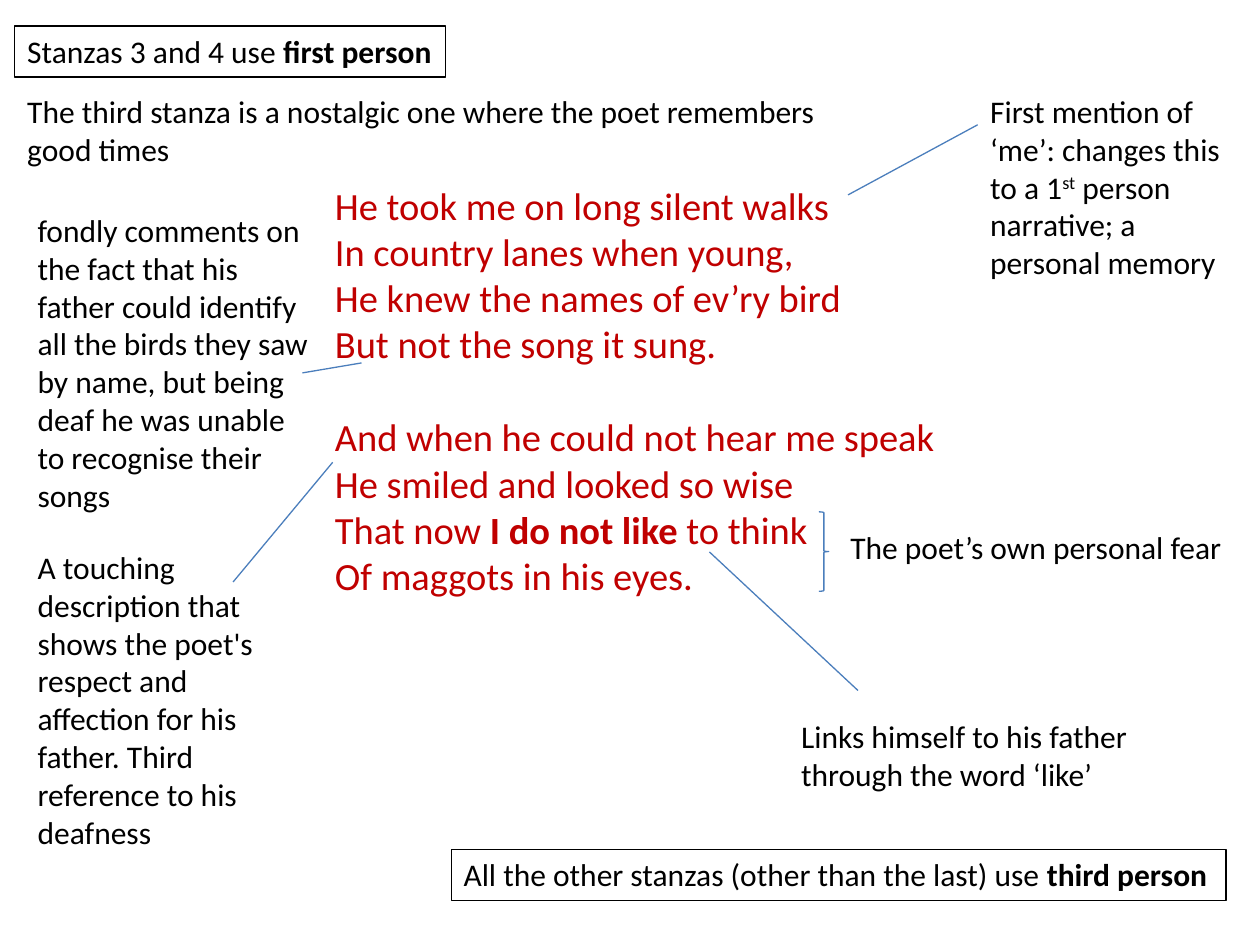
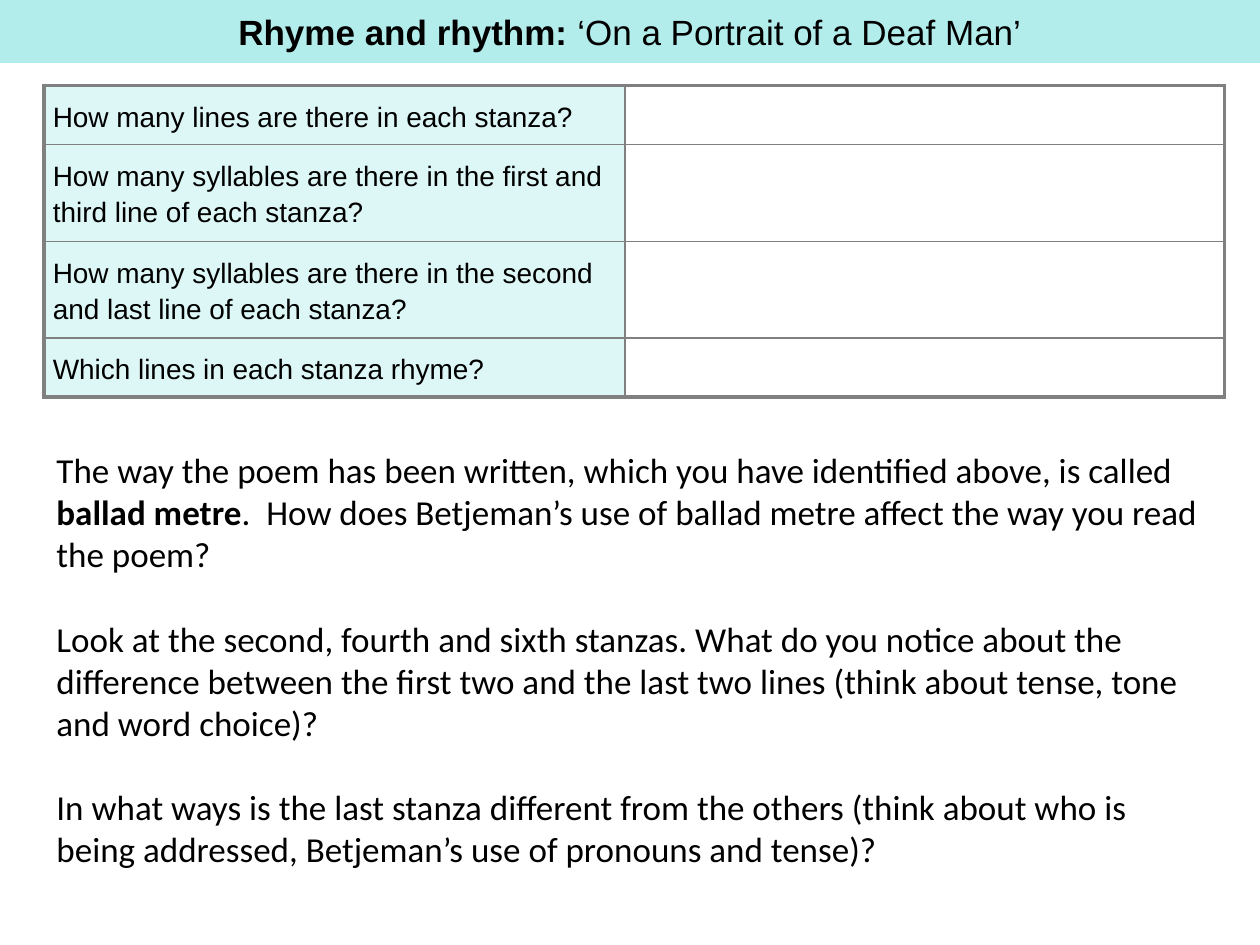
from typing import NamedTuple

from lxml.etree import SubElement
from pptx import Presentation
from pptx.dml.color import RGBColor
from pptx.enum.shapes import MSO_CONNECTOR as Link, MSO_SHAPE as Shape
from pptx.enum.text import MSO_ANCHOR as Anchor, MSO_AUTO_SIZE as Fit, PP_ALIGN as Align
from pptx.oxml.ns import qn
from pptx.util import Pt

BLACK, RED, BLUE, GREY = "000000", "C00000", "4B7EBC", "808080"
BAND, TINT = "B2EDEC", "DDF7F6"
SERIF_FREE, SANS = "Calibri", "Arial"
LEADING = 1.22  # line height of the body font, relative to its size


class Run(NamedTuple):
    text: str
    bold: bool = False
    raised: bool = False


class Note(NamedTuple):
    """A text box; each block is a list of lines, each line a list of runs."""
    x: float
    y: float
    w: float
    h: float
    blocks: list[list[list[Run]]]
    size: float = 18
    color: str = BLACK
    framed: bool = False
    wrap: bool = True


class Line(NamedTuple):
    x1: float
    y1: float
    x2: float
    y2: float


def rgb(code: str) -> RGBColor:
    return RGBColor.from_string(code)


def one(*runs: Run) -> list[list[list[Run]]]:
    """Blocks for a note with a single paragraph."""
    return [[list(runs)]]


def lines(*texts: str) -> list[list[Run]]:
    return [[Run(text)] for text in texts]


def write(para, runs: list[Run], size: float, color: str, face: str) -> None:
    for item in runs:
        run = para.add_run()
        run.text = item.text
        font = run.font
        font.name, font.size, font.bold = face, Pt(size), item.bold
        font.color.rgb = rgb(color)
        if item.raised:
            run._r.get_or_add_rPr().set("baseline", "30000")


def add_note(slide, note: Note) -> None:
    box = slide.shapes.add_textbox(Pt(note.x), Pt(note.y), Pt(note.w), Pt(note.h))
    if note.framed:
        box.line.color.rgb = rgb(BLACK)
        box.line.width = Pt(0.75)
    frame = box.text_frame
    frame.word_wrap = note.wrap
    frame.auto_size = Fit.SHAPE_TO_FIT_TEXT
    para = None
    for block in note.blocks:
        for row, runs in enumerate(block):
            first = para is None
            para = frame.paragraphs[0] if first else frame.add_paragraph()
            if row == 0 and not first:
                para.space_before = Pt(round(note.size * LEADING, 1))
            write(para, runs, note.size, note.color, SERIF_FREE)


def add_line(slide, line: Line) -> None:
    link = slide.shapes.add_connector(Link.STRAIGHT, *map(Pt, line))
    link.line.color.rgb = rgb(BLUE)
    link.line.width = Pt(0.75)
    SubElement(link._element.spPr, qn("a:effectLst"))


def add_brace(slide, x: float, y: float, w: float, h: float) -> None:
    brace = slide.shapes.add_shape(Shape.RIGHT_BRACE, Pt(x), Pt(y), Pt(w), Pt(h))
    brace.shadow.inherit = False
    brace.fill.background()
    brace.line.color.rgb = rgb(BLUE)
    brace.line.width = Pt(0.75)


def set_title(slide, runs: list[Run]) -> None:
    """Turn the title placeholder into a band across the top."""
    title = slide.shapes.title
    title.left, title.top, title.width, title.height = Pt(0), Pt(0), Pt(720), Pt(36)
    title.fill.solid()
    title.fill.fore_color.rgb = rgb(BAND)
    frame = title.text_frame
    frame.auto_size, frame.vertical_anchor = Fit.NONE, Anchor.MIDDLE
    para = frame.paragraphs[0]
    para.alignment = Align.CENTER
    write(para, runs, 20, BLACK, SANS)


def add_edge(cell, side: str, width: float) -> None:
    edge = SubElement(cell._tc.get_or_add_tcPr(), qn(f"a:ln{side}"), w=str(Pt(width)))
    fill = SubElement(edge, qn("a:solidFill"))
    SubElement(fill, qn("a:srgbClr"), val=GREY)


def add_grid(slide, asks: list[str], tall: list[float]) -> None:
    """Questions on the left, empty answer cells on the right."""
    count = len(asks)
    table = slide.shapes.add_table(count, 2, Pt(25.2), Pt(49), Pt(674.6), Pt(sum(tall))).table
    table.first_row = table.horz_banding = False
    for col, width in zip(table.columns, (331.9, 342.7)):
        col.width = Pt(width)
    for row, (ask, height) in enumerate(zip(asks, tall)):
        table.rows[row].height = Pt(height)
        for col in range(2):
            cell = table.cell(row, col)
            outer = {"L": col == 0, "R": col == 1, "T": row == 0, "B": row == count - 1}
            for side, edge in outer.items():
                add_edge(cell, side, 2.25 if edge else 1)
            if col == 1:
                cell.fill.background()
                continue
            cell.fill.solid()
            cell.fill.fore_color.rgb = rgb(TINT)
            cell.vertical_anchor = Anchor.MIDDLE
            cell.margin_left = cell.margin_right = Pt(5)
            cell.margin_top = cell.margin_bottom = Pt(5.7)
            para = cell.text_frame.paragraphs[0]
            para.line_spacing = 1.15
            write(para, [Run(ask)], 16, BLACK, SANS)


POEM = [
    lines("He took me on long silent walks", "In country lanes when young,",
          "He knew the names of ev’ry bird", "But not the song it sung."),
    lines("And when he could not hear me speak", "He smiled and looked so wise")
    + [[Run("That now "), Run("I do not like ", bold=True), Run("to think")]]
    + lines("Of maggots in his eyes."),
]

NOTES = [
    Note(8.5, 14.9, 246, 29.1,
         one(Run("Stanzas 3 and 4 use "), Run("first person", bold=True)),
         framed=True, wrap=False),
    Note(184.3, 100.4, 365.8, 296, POEM, size=22, color=RED),
    Note(558.7, 49, 147.6, 116.6,
         one(Run("First mention of ‘me’: changes this to a 1"), Run("st", raised=True),
             Run(" person narrative; a personal memory"))),
    Note(478.8, 298.4, 229, 29.1, one(Run("The poet’s own personal fear")), wrap=False),
    Note(257.8, 485.3, 442.8, 29.1,
         one(Run("All the other stanzas (other than the last) use "),
             Run("third person", bold=True)),
         framed=True, wrap=False),
    Note(8.5, 49, 487.4, 50.9,
         one(Run("The third stanza is a nostalgic one where the poet remembers good times"))),
    Note(14.4, 117, 169.9, 203.8,
         one(Run("fondly comments on the fact that his father could identify all the birds "
                 "they saw by name, but being deaf he was unable to recognise their songs"))),
    Note(14.4, 309.6, 164.2, 181.4,
         one(Run("A touching description that shows the poet's respect and affection for "
                 "his father. Third reference to his deafness"))),
    Note(450.7, 406.1, 254.9, 50.9,
         one(Run("Links himself to his father through the word ‘like’"))),
]

LINES = [
    Line(484.6, 111.4, 558.7, 71.3),
    Line(172.8, 213.1, 206.6, 207.4),
    Line(133.2, 332.6, 190.1, 264.2),
    Line(405.4, 315.4, 490.3, 394.6),
]

ASKS = [
    "How many lines are there in each stanza?",
    "How many syllables are there in the first and third line of each stanza?",
    "How many syllables are there in the second and last line of each stanza?",
    "Which lines in each stanza rhyme?",
]

TASKS = [
    [[Run("The way the poem has been written, which you have identified above, is called "),
      Run("ballad metre", bold=True),
      Run(".  How does Betjeman’s use of ballad metre affect the way you read the poem?")]],
    lines("Look at the second, fourth and sixth stanzas. What do you notice about the "
          "difference between the first two and the last two lines (think about tense, "
          "tone and word choice)?"),
    lines("In what ways is the last stanza different from the others (think about who is "
          "being addressed, Betjeman’s use of pronouns and tense)?"),
]


def main() -> None:
    deck = Presentation()
    deck.slide_width, deck.slide_height = Pt(720), Pt(540)
    only_title, blank = deck.slide_layouts[5], deck.slide_layouts[6]

    person = deck.slides.add_slide(blank)
    for note in NOTES:
        add_note(person, note)
    for line in LINES:
        add_line(person, line)
    add_brace(person, 468, 292.5, 5.6, 45.4)

    rhyme = deck.slides.add_slide(only_title)
    set_title(rhyme, [Run("Rhyme and rhythm: ", bold=True),
                      Run("‘On a Portrait of a Deaf Man’")])
    add_grid(rhyme, ASKS, [33.5, 55.4, 55.4, 33.5])
    add_note(rhyme, Note(25.2, 252.7, 674.6, 271.4, TASKS, size=20))

    deck.save("out.pptx")


if __name__ == "__main__":
    main()
